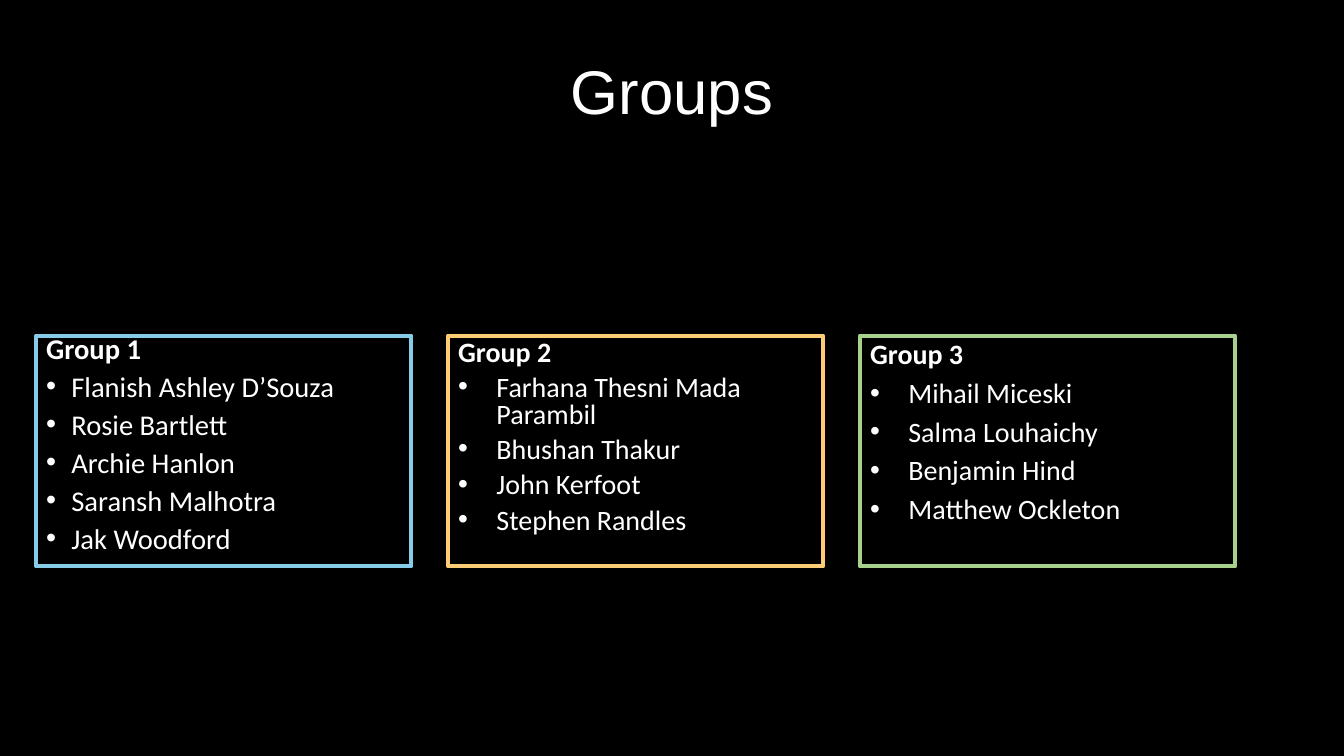
from dataclasses import dataclass

from lxml.etree import SubElement
from pptx import Presentation
from pptx.dml.color import RGBColor
from pptx.enum.shapes import MSO_SHAPE
from pptx.enum.text import MSO_ANCHOR, PP_ALIGN
from pptx.oxml.ns import qn
from pptx.slide import Slide
from pptx.util import Emu, Inches, Pt

BLACK = RGBColor(0x00, 0x00, 0x00)
WHITE = RGBColor(0xFF, 0xFF, 0xFF)
SKY = RGBColor(0x86, 0xCC, 0xE8)
AMBER = RGBColor(0xFC, 0xCD, 0x76)
GREEN = RGBColor(0xA9, 0xD1, 0x8E)

SLIDE_WIDTH = Inches(13.33)
SLIDE_HEIGHT = Inches(7.5)
FIRST_COLUMN = 2.7
COLUMN_PITCH = 30.65
COLUMN_WIDTH = 27.9
ROW_TOP = 44.4
ROW_HEIGHT = 30.53


@dataclass(frozen=True)
class Group:
    heading: str
    members: tuple[str, ...]
    outline: RGBColor
    size: float
    line_spacing: float
    indent: float
    before: float = 0
    after: float = 0


GROUPS = (
    Group(
        "Group 1",
        ("Flanish Ashley D’Souza", "Rosie Bartlett", "Archie Hanlon",
         "Saransh Malhotra", "Jak Woodford"),
        SKY, 20.4, 0.7, 0.25, before=10,
    ),
    Group(
        "Group 2",
        ("Farhana Thesni Mada Parambil", "Bhushan Thakur", "John Kerfoot",
         "Stephen Randles"),
        AMBER, 20, 0.8, 0.38, after=6,
    ),
    Group(
        "Group 3",
        ("Mihail Miceski", "Salma Louhaichy", "Benjamin Hind",
         "Matthew Ockleton"),
        GREEN, 20, 0.9, 0.38, after=6,
    ),
)


def across(percent: float) -> Emu:
    return Emu(round(SLIDE_WIDTH * percent / 100))


def down(percent: float) -> Emu:
    return Emu(round(SLIDE_HEIGHT * percent / 100))


def add_bullet(paragraph, indent: float) -> None:
    properties = paragraph._p.get_or_add_pPr()
    properties.set("marL", str(Inches(indent)))
    properties.set("indent", str(-Inches(indent)))
    SubElement(properties, qn("a:buFont"), typeface="Arial")
    SubElement(properties, qn("a:buChar"), char="•")


def add_text(paragraph, text: str, font_name: str, size: float, bold: bool = False) -> None:
    run = paragraph.add_run()
    run.text = text
    run.font.name = font_name
    run.font.size = Pt(size)
    run.font.bold = bold
    run.font.color.rgb = WHITE


def add_title(slide: Slide, text: str) -> None:
    title = slide.shapes.title
    title.left, title.top = across(0), down(2.8)
    title.width, title.height = across(100), down(19.33)
    title.text_frame.vertical_anchor = MSO_ANCHOR.MIDDLE
    paragraph = title.text_frame.paragraphs[0]
    paragraph.alignment = PP_ALIGN.CENTER
    paragraph.line_spacing = 0.9
    add_text(paragraph, text, "Arial", 44)


def add_group(slide: Slide, group: Group, column: int) -> None:
    box = slide.shapes.add_shape(
        MSO_SHAPE.RECTANGLE,
        across(FIRST_COLUMN + column * COLUMN_PITCH), down(ROW_TOP),
        across(COLUMN_WIDTH), down(ROW_HEIGHT),
    )
    box.shadow.inherit = False
    box.fill.background()
    box.line.color.rgb = group.outline
    box.line.width = Pt(3)
    frame = box.text_frame
    frame.word_wrap = True
    frame.vertical_anchor = MSO_ANCHOR.TOP
    for index, text in enumerate((group.heading, *group.members)):
        is_heading = index == 0
        paragraph = frame.paragraphs[0] if is_heading else frame.add_paragraph()
        if not is_heading:
            add_bullet(paragraph, group.indent)
        paragraph.alignment = PP_ALIGN.LEFT
        paragraph.line_spacing = group.line_spacing
        paragraph.space_before = Pt(0 if is_heading else group.before)
        paragraph.space_after = Pt(group.after)
        add_text(paragraph, text, "Calibri", group.size, is_heading)


def main() -> None:
    presentation = Presentation()
    presentation.slide_width = SLIDE_WIDTH
    presentation.slide_height = SLIDE_HEIGHT
    slide = presentation.slides.add_slide(presentation.slide_layouts[5])
    slide.background.fill.solid()
    slide.background.fill.fore_color.rgb = BLACK
    add_title(slide, "Groups")
    for column, group in enumerate(GROUPS):
        add_group(slide, group, column)
    presentation.save("out.pptx")


if __name__ == "__main__":
    main()
